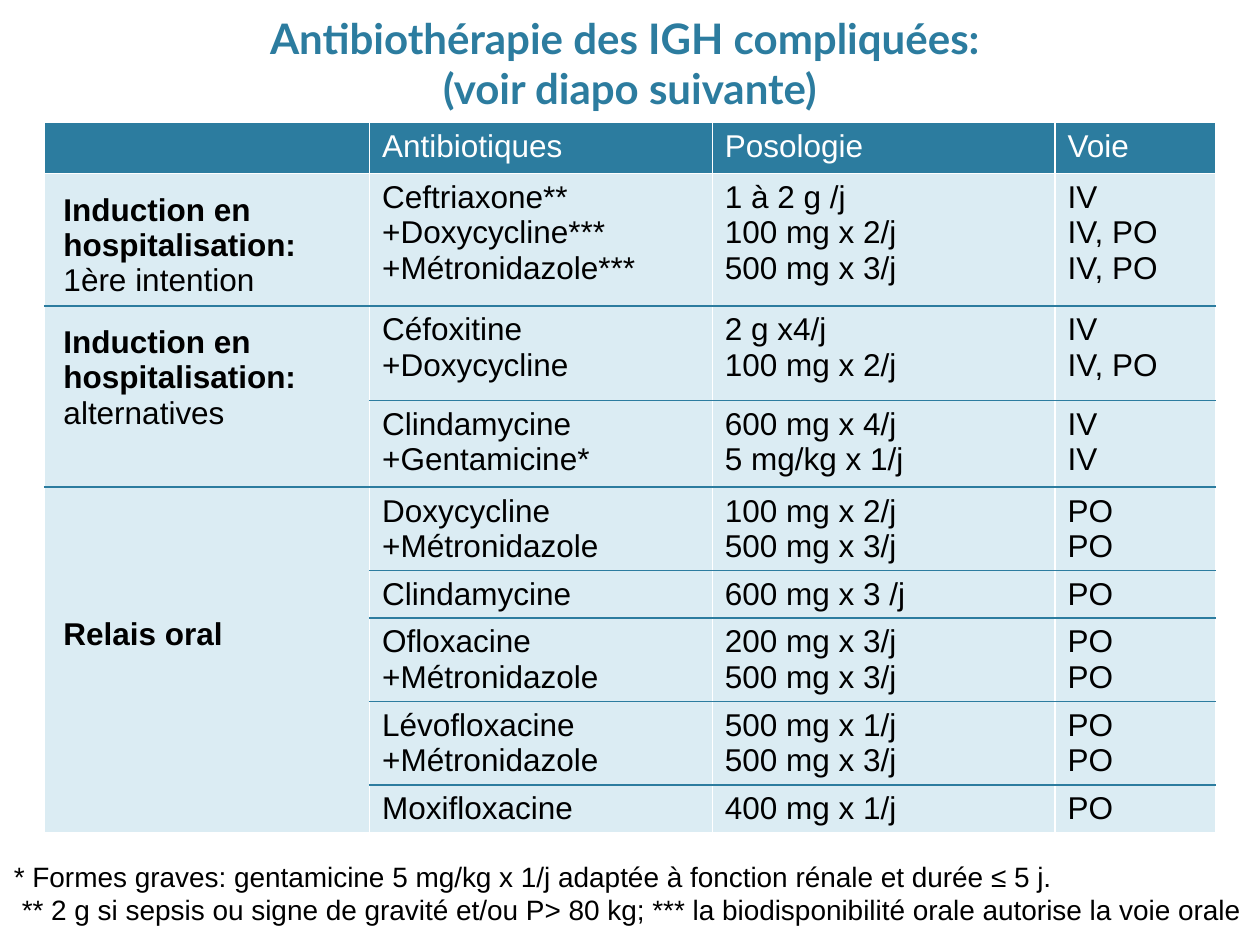
from lxml.etree import SubElement
from pptx import Presentation
from pptx.dml.color import RGBColor
from pptx.enum.text import MSO_ANCHOR, PP_ALIGN
from pptx.oxml.ns import qn
from pptx.util import Cm, Pt

TEAL, PALE, WHITE, BLACK = "2C7C9F", "DBECF3", "FFFFFF", "000000"

HEADS = ["", "Antibiotiques", "Posologie", "Voie"]
# Each stage: bold label, plain label, top margin, regimens (drugs, doses, routes)
STAGES = [
    ("Induction en hospitalisation:", "1ère intention", 0.38, [
        ("Ceftriaxone**\n+Doxycycline***\n+Métronidazole***",
         "1 à 2 g /j\n100 mg x 2/j\n500 mg x 3/j", "IV\nIV, PO\nIV, PO")]),
    ("Induction en hospitalisation:", "alternatives", 0.38, [
        ("Céfoxitine\n+Doxycycline", "2 g x4/j\n100 mg x 2/j", "IV\nIV, PO"),
        ("Clindamycine\n+Gentamicine*", "600 mg x 4/j\n5 mg/kg x 1/j", "IV\nIV")]),
    ("Relais oral", "", 2.62, [
        ("Doxycycline\n+Métronidazole", "100 mg x 2/j\n500 mg x 3/j", "PO\nPO"),
        ("Clindamycine", "600 mg x 3 /j", "PO"),
        ("Ofloxacine\n+Métronidazole", "200 mg x 3/j\n500 mg x 3/j", "PO\nPO"),
        ("Lévofloxacine\n+Métronidazole", "500 mg x 1/j\n500 mg x 3/j", "PO\nPO"),
        ("Moxifloxacine", "400 mg x 1/j", "PO")]),
]
WIDTHS = [6.55, 6.91, 6.91, 3.23]
ONE, TWO = 0.96, 1.68  # heights of rows with one and two lines
HEIGHTS = [1.03, 2.67, 1.9, 1.75, TWO, ONE, TWO, TWO, ONE]


def color(code):
    return RGBColor.from_string(code)


def add_run(para, text, size, code, bold=False, font="Arial"):
    run = para.add_run()
    run.text = text
    run.font.name = font
    run.font.size = Pt(size)
    run.font.bold = bold
    run.font.color.rgb = color(code)


def add_box(slide, left, top, width, height):
    box = slide.shapes.add_textbox(Cm(left), Cm(top), Cm(width), Cm(height))
    box.text_frame.word_wrap = True
    return box.text_frame


def add_lines(frame, lines, code):
    """Write (text, bold) pairs, one paragraph each."""
    for i, (text, bold) in enumerate(lines):
        para = frame.add_paragraph() if i else frame.paragraphs[0]
        add_run(para, text, 18, code, bold)


def style_cell(cell, fill, above, below):
    """Draw white sides, the given (colour, width) rules, then the fill."""
    props = cell._tc.get_or_add_tcPr()
    side = (WHITE, 1)
    for tag, (code, width) in zip(("lnL", "lnR", "lnT", "lnB"),
                                  (side, side, above, below)):
        line = SubElement(props, qn("a:" + tag), w=str(Pt(width)))
        paint = SubElement(line, qn("a:solidFill"))
        SubElement(paint, qn("a:srgbClr"), val=code)
    cell.fill.solid()
    cell.fill.fore_color.rgb = color(fill)


def add_title(slide):
    frame = add_box(slide, 0, 0.66, 25.4, 1.75)
    frame.vertical_anchor = MSO_ANCHOR.BOTTOM
    para = frame.paragraphs[0]
    para.alignment = PP_ALIGN.CENTER
    add_run(para, "Antibiothérapie des IGH compliquées: ", 24, TEAL, True, "Lato")
    para.add_line_break()
    add_run(para, "(voir diapo suivante)", 24, TEAL, True, "Lato")


def add_grid(slide):
    table = slide.shapes.add_table(
        len(HEIGHTS), len(WIDTHS), Cm(0.9), Cm(2.47),
        Cm(sum(WIDTHS)), Cm(sum(HEIGHTS))).table
    table.horz_banding = False
    for col, width in zip(table.columns, WIDTHS):
        col.width = Cm(width)
    for row, height in zip(table.rows, HEIGHTS):
        row.height = Cm(height)

    # Header row
    plain, thin, thick = (WHITE, 1), (TEAL, 1), (TEAL, 1.5)
    for col, head in enumerate(HEADS):
        cell = table.cell(0, col)
        style_cell(cell, TEAL, plain, plain)
        if head:
            add_lines(cell.text_frame, [(head, False)], WHITE)

    # Stages, each with its merged label and its regimens
    row = 1
    for bold, note, top, drugs in STAGES:
        last = row + len(drugs) - 1
        start = plain if row == 1 else thick
        end = plain if last == len(HEIGHTS) - 1 else thick
        label = table.cell(row, 0)
        if last > row:
            label.merge(table.cell(last, 0))
        style_cell(label, PALE, start, end)
        label.margin_left = label.margin_right = Cm(0.38)
        label.margin_top, label.margin_bottom = Cm(top), Cm(0)
        lines = [(bold, True)] + ([(note, False)] if note else [])
        add_lines(label.text_frame, lines, BLACK)
        for i, texts in enumerate(drugs, row):
            for col, text in enumerate(texts, 1):
                cell = table.cell(i, col)
                style_cell(cell, PALE, start if i == row else thin,
                           end if i == last else thin)
                cell.margin_bottom = Cm(0)
                add_lines(cell.text_frame,
                          [(part, False) for part in text.split("\n")], BLACK)
        row = last + 1


def add_notes(slide):
    frame = add_box(slide, 0.03, 17.2, 25.7, 1.62)
    add_run(frame.paragraphs[0], "* Formes graves: gentamicine 5 mg/kg x 1/j "
            "adaptée à fonction rénale et durée ≤ 5 j.", 16, BLACK)
    para = frame.add_paragraph()
    para._p.get_or_add_pPr().set("marL", str(Cm(0.16)))
    add_run(para, "** 2 g si sepsis ou signe de gravité et/ou P> 80 kg; "
            "*** la biodisponibilité orale autorise la voie orale", 16, BLACK)


def main():
    deck = Presentation()
    deck.slide_width, deck.slide_height = Cm(25.4), Cm(19.05)
    slide = deck.slides.add_slide(deck.slide_layouts[6])
    add_title(slide)
    add_grid(slide)
    add_notes(slide)
    deck.save("out.pptx")


if __name__ == "__main__":
    main()
